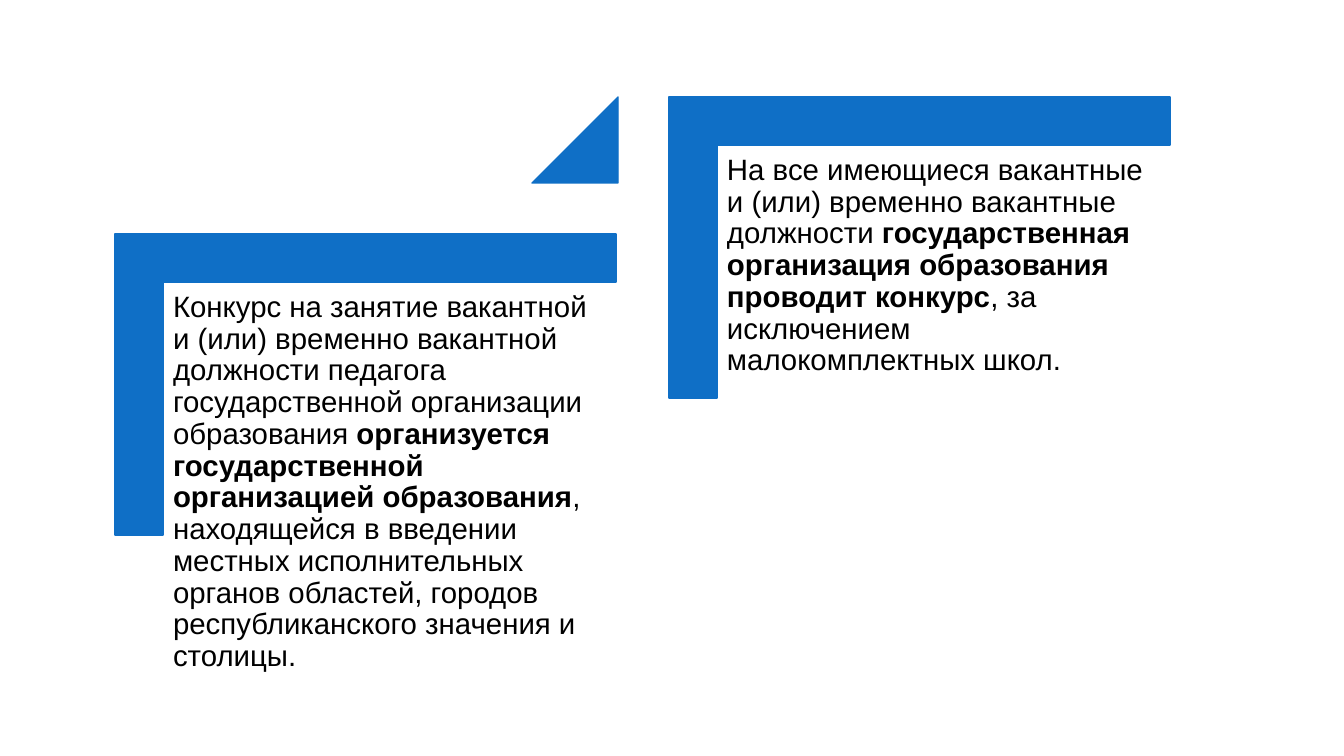
from pptx import Presentation
from pptx.dml.color import RGBColor
from pptx.enum.shapes import MSO_SHAPE
from pptx.util import Emu, Pt

BLUE = RGBColor(0x0F, 0x6F, 0xC6)
BLACK = RGBColor(0x00, 0x00, 0x00)
FONT = "Arial"
EMU_PER_PX = 914400 / 100.8

# Each step is a list of (text, bold) pieces
STEPS = [
    [
        ("Конкурс на занятие вакантной и (или) временно вакантной должности педагога "
         "государственной организации образования ", False),
        ("организуется государственной организацией образования", True),
        (", находящейся в введении местных исполнительных органов областей, городов "
         "республиканского значения и столицы.", False),
    ],
    [
        ("На все имеющиеся вакантные и (или) временно вакантные должности ", False),
        ("государственная организация образования проводит конкурс", True),
        (", за исключением малокомплектных школ.", False),
    ],
]

SLIDE_WIDTH, SLIDE_HEIGHT = 1344, 756
FIRST_LEFT, FIRST_TOP = 115, 234
STEP_RIGHT, STEP_UP = 554, 137
BRACKET_WIDTH, BRACKET_HEIGHT = 501, 301
BRACKET_ARM = 0.16
TEXT_OFFSET = 49
TEXT_WIDTH, TEXT_HEIGHT = 453, 397
TEXT_INSET = 9
TRIANGLE_SIZE = 86


def px(length):
    return Emu(round(length * EMU_PER_PX))


def add_blue_shape(slide, kind, left, top, width, height, adjustments):
    shape = slide.shapes.add_shape(kind, px(left), px(top), px(width), px(height))
    shape.shadow.inherit = False
    shape.fill.solid()
    shape.fill.fore_color.rgb = BLUE
    shape.line.color.rgb = BLUE
    shape.line.width = Pt(1)
    for index, value in enumerate(adjustments):
        shape.adjustments[index] = value
    return shape


def add_bracket(slide, left, top):
    """Add a corner turned a quarter, so its unrotated box has swapped sides."""
    shift = (BRACKET_WIDTH - BRACKET_HEIGHT) / 2
    bracket = add_blue_shape(slide, MSO_SHAPE.CORNER, left + shift, top - shift,
                             BRACKET_HEIGHT, BRACKET_WIDTH, [BRACKET_ARM, BRACKET_ARM])
    bracket.rotation = 90


def add_step_text(slide, pieces, left, top):
    box = slide.shapes.add_textbox(px(left), px(top), px(TEXT_WIDTH), px(TEXT_HEIGHT))
    frame = box.text_frame
    frame.word_wrap = True
    frame.margin_left = frame.margin_right = px(TEXT_INSET)
    frame.margin_top = frame.margin_bottom = px(TEXT_INSET)
    paragraph = frame.paragraphs[0]
    paragraph.line_spacing = 0.9
    for text, bold in pieces:
        run = paragraph.add_run()
        run.text = text
        run.font.name = FONT
        run.font.size = Pt(21)
        run.font.bold = bold
        run.font.color.rgb = BLACK


def main():
    presentation = Presentation()
    presentation.slide_width = px(SLIDE_WIDTH)
    presentation.slide_height = px(SLIDE_HEIGHT)
    slide = presentation.slides.add_slide(presentation.slide_layouts[6])

    for index, pieces in enumerate(STEPS):
        left = FIRST_LEFT + index * STEP_RIGHT
        top = FIRST_TOP - index * STEP_UP
        add_bracket(slide, left, top)
        add_step_text(slide, pieces, left + TEXT_OFFSET, top + TEXT_OFFSET)
        if index < len(STEPS) - 1:
            add_blue_shape(slide, MSO_SHAPE.ISOSCELES_TRIANGLE,
                           left + BRACKET_WIDTH - TRIANGLE_SIZE + 2, top - STEP_UP,
                           TRIANGLE_SIZE, TRIANGLE_SIZE, [1])

    presentation.save("out.pptx")


if __name__ == "__main__":
    main()
